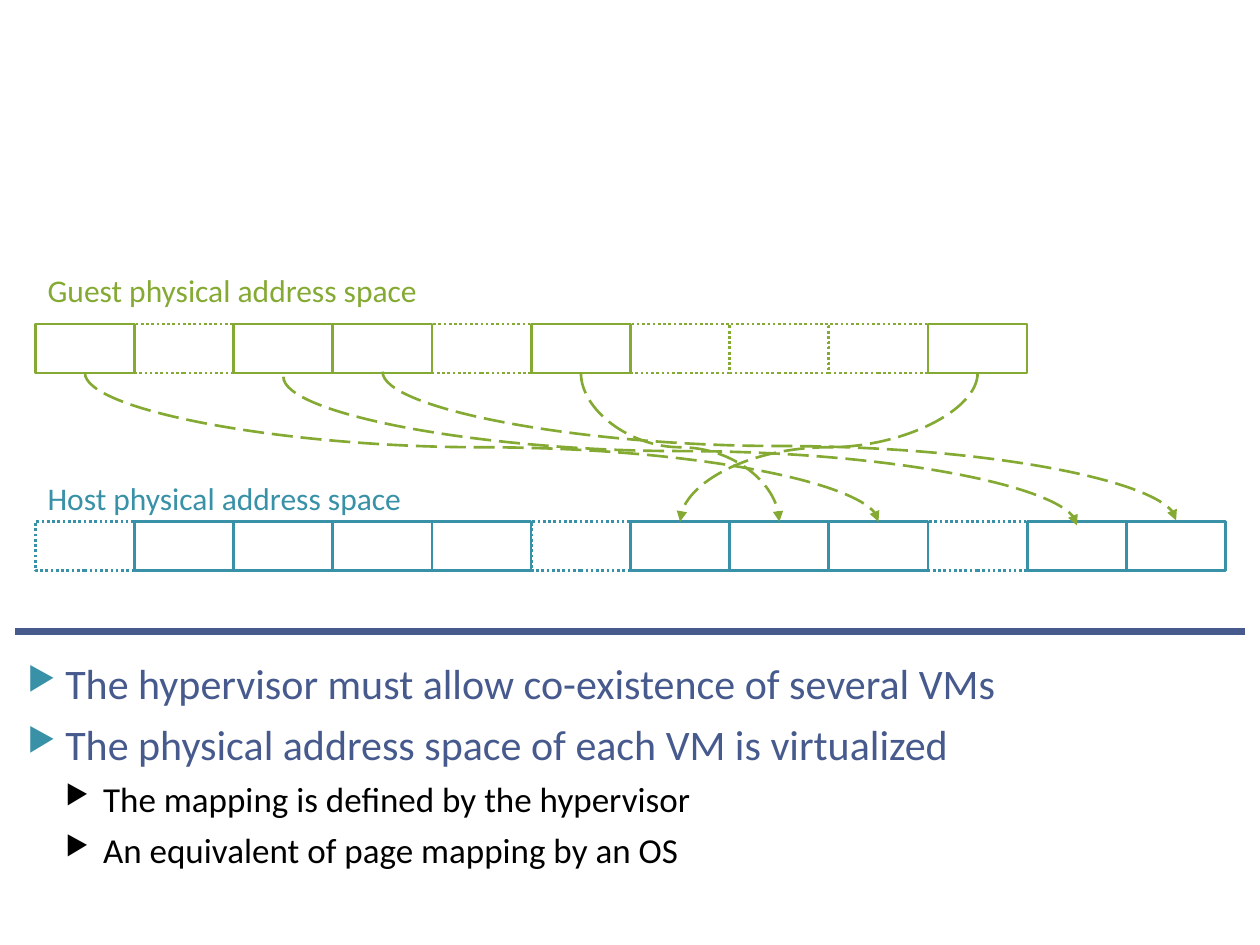
from lxml import etree
from pptx import Presentation
from pptx import util as u
from pptx.dml.color import RGBColor
from pptx.enum import dml, shapes, text
from pptx.oxml import ns

GREEN = RGBColor(0x84, 0xAA, 0x33)
TEAL = RGBColor(0x38, 0x91, 0xA7)
NAVY = RGBColor(0x47, 0x5A, 0x8D)
BLACK = RGBColor(0, 0, 0)

LEFT, WIDE, HIGH = 0.28, 8.66 / 11, 0.39
GUEST, HOST = 2.57, 4.14
DOT, DASH = dml.MSO_LINE.ROUND_DOT, dml.MSO_LINE.LONG_DASH


def put(item, **vals):
    for name, val in vals.items():
        setattr(item, name, val)


def sub(node, tag, **vals):
    return etree.SubElement(node, ns.qn("a:" + tag), vals)


class Deck:
    font = "Calibri"
    thin = 1.5

    def __init__(self):
        self.prs = Presentation()
        put(self.prs, slide_width=u.Inches(10), slide_height=u.Inches(7.5))
        self.slide = self.prs.slides.add_slide(self.prs.slide_layouts[6])

    def stroke(self, line, color, dash=None, width=thin):
        line.color.rgb = color
        put(line, width=u.Pt(width), dash_style=dash)

    def phrase(self, para, words, size, color):
        run = para.add_run()
        put(run, text=words)
        put(run.font, name=self.font, size=u.Pt(size))
        run.font.color.rgb = color

    def frame(self, *box, **vals):
        frame = self.slide.shapes.add_textbox(*map(u.Inches, box)).text_frame
        put(frame, **vals)
        return frame

    def label(self, words, top, width, color):
        frame = self.frame(LEFT, top, width, 0.4, word_wrap=False,
                           auto_size=text.MSO_AUTO_SIZE.SHAPE_TO_FIT_TEXT)
        self.phrase(frame.paragraphs[0], words, 18, color)

    def cells(self, count, used, top, color):
        for num in range(count):
            box = (LEFT + num * WIDE, top, WIDE, HIGH)
            cell = self.slide.shapes.add_shape(
                shapes.MSO_SHAPE.RECTANGLE, *map(u.Inches, box))
            cell.shadow.inherit = False
            cell.fill.background()
            self.stroke(cell.line, color, None if num in used else DOT)

    def join(self, kind, ends, color, **style):
        line = self.slide.shapes.add_connector(kind, *map(u.Inches, ends))
        self.stroke(line.line, color, **style)
        sub(line._element.spPr, "effectLst")
        return line

    def curve(self, start, end, shift, color):
        x1, x2 = (LEFT + (num + 0.5) * WIDE for num in (start, end))
        drop, span = HOST - GUEST - HIGH, abs(x2 - x1)
        mid, top = (x1 + x2) / 2, GUEST + HIGH + shift + (drop - span) / 2
        side = drop / 2 if x2 > x1 else -drop / 2
        line = self.join(shapes.MSO_CONNECTOR.CURVE,
                         (mid + side, top, mid - side, top + span),
                         color, dash=DASH)
        turn = 270 if x2 > x1 else 90
        line._element.spPr.find(ns.qn("a:xfrm")).set("rot", str(turn * 60000))
        sub(line.line._get_or_add_ln(), "tailEnd", type="triangle")

    def points(self, rows, *box):
        frame = self.frame(*box, word_wrap=True)
        for num, (level, words) in enumerate(rows):
            para = frame.add_paragraph() if num else frame.paragraphs[0]
            size, color, mark, gap = ((24, NAVY, TEAL, 6),
                                      (20, BLACK, BLACK, 5))[level]
            put(para, level=level, space_before=u.Pt(gap))
            props = para._p.get_or_add_pPr()
            props.set("marL", str(u.Inches(0.3 * (level + 1))))
            props.set("indent", str(u.Inches(-0.3)))
            sub(sub(props, "buClr"), "srgbClr", val=str(mark))
            sub(props, "buSzPct", val="76000")
            sub(props, "buChar", char="▶")
            self.phrase(para, words, size, color)


def main():
    deck = Deck()
    deck.join(shapes.MSO_CONNECTOR.STRAIGHT, (0.12, 5.01, 9.88, 5.01),
              NAVY, width=4)
    deck.points([
        (0, "The hypervisor must allow co-existence of several VMs"),
        (0, "The physical address space of each VM is virtualized"),
        (1, "The mapping is defined by the hypervisor"),
        (1, "An equivalent of page mapping by an OS"),
    ], 0.12, 5.17, 9.76, 1.89)
    deck.label("Guest physical address space", 2.1, 3.17, GREEN)
    deck.label("Host physical address space", 3.75, 3.04, TEAL)
    deck.cells(10, {0, 2, 3, 5, 9}, GUEST, GREEN)
    deck.cells(12, {1, 2, 3, 4, 6, 7, 8, 10, 11}, HOST, TEAL)
    for start, end, shift in ((9, 6, 0), (0, 8, 0), (5, 7, 0),
                              (2, 10, 0.03), (3, 11, -0.01)):
        deck.curve(start, end, shift, GREEN)
    deck.prs.save("out.pptx")


if __name__ == "__main__":
    main()
